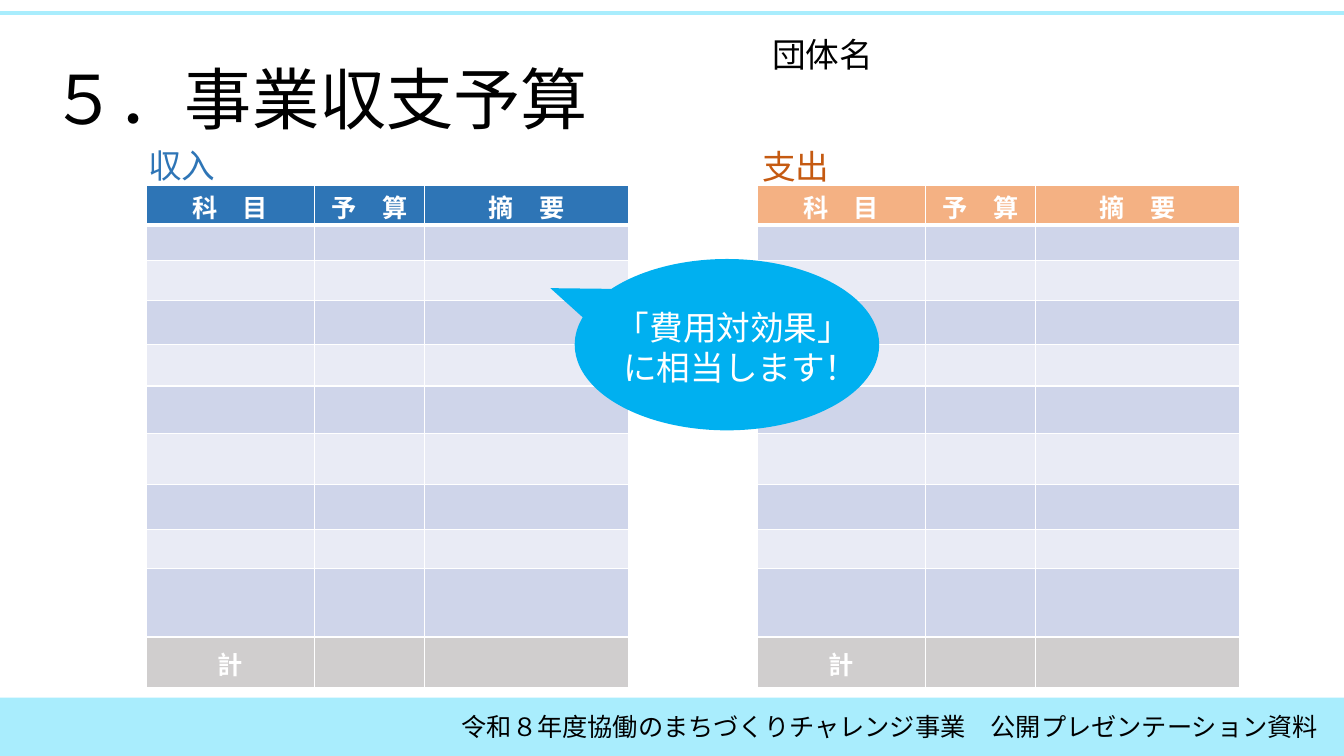
from lxml import etree
from pptx import Presentation
from pptx.dml.color import RGBColor
from pptx.enum.shapes import MSO_CONNECTOR, MSO_SHAPE
from pptx.enum.text import MSO_ANCHOR, MSO_AUTO_SIZE, PP_ALIGN
from pptx.oxml.ns import qn
from pptx.util import Emu, Pt

LEFT, CENTER = PP_ALIGN.LEFT, PP_ALIGN.CENTER
TOP, MIDDLE = MSO_ANCHOR.TOP, MSO_ANCHOR.MIDDLE
RECTANGLE, CALLOUT = MSO_SHAPE.RECTANGLE, MSO_SHAPE.OVAL_CALLOUT
STRAIGHT = MSO_CONNECTOR.STRAIGHT
NO_AUTOFIT = MSO_AUTO_SIZE.NONE

EMU_PER_PX = 9144
FONT = "Noto Sans CJK JP"
TABLE_FONT = "Calibri"
BLACK, WHITE = "000000", "FFFFFF"
AQUA, SKY = "A9EDFD", "00B0F0"
BLUE, ORANGE, PEACH = "2E75B6", "C55A11", "F4B183"
BANDS = ("CFD5EA", "E9EBF5")
TOTAL_FILL = "D0CECE"

HEADINGS = ("科　目", "予　算", "摘　要")
COLUMN_WIDTHS = (167, 109, 203)
ROW_HEIGHTS = (39, 35, 40, 44, 41, 47, 51, 44, 39, 68, 50)


def px(length):
    return Emu(length * EMU_PER_PX)


def color(value):
    return RGBColor.from_string(value)


def set_all(target, values):
    for name, value in values.items():
        setattr(target, name, value)


class BudgetPage:
    def __init__(self, deck):
        self.page = deck.slides.add_slide(deck.slide_layouts[5])
        self.shapes = self.page.shapes

    def add_span(self, para, content, size, ink, font=FONT, bold=False, align=LEFT):
        set_all(para, {"alignment": align, "line_spacing": Pt(round(size * 1.2, 1)),
                       "space_before": Pt(0), "space_after": Pt(0)})
        span = para.add_run()
        span.text = content
        set_all(span.font, {"name": font, "size": Pt(size), "bold": bold})
        span.font.color.rgb = color(ink)
        latin = span.font._element.find(qn("a:latin"))
        east_asian = etree.Element(qn("a:ea"), typeface=FONT)
        latin.addnext(east_asian)

    def fill_frame(self, frame, lines, size, ink):
        set_all(frame, {"word_wrap": True, "auto_size": NO_AUTOFIT, "vertical_anchor": TOP,
                        "margin_left": px(10), "margin_right": px(10),
                        "margin_top": px(5 + size // 8), "margin_bottom": px(5)})
        for number, content in enumerate(lines):
            para = frame.add_paragraph() if number else frame.paragraphs[0]
            self.add_span(para, content, size, ink)

    def title(self, content, left, top, width, height):
        box = self.shapes.title
        set_all(box, {"left": px(left), "top": px(top),
                      "width": px(width), "height": px(height)})
        self.fill_frame(box.text_frame, [content], 48, BLACK)

    def text(self, lines, left, top, width, height, size=24, ink=BLACK):
        box = self.shapes.add_textbox(px(left), px(top), px(width), px(height))
        self.fill_frame(box.text_frame, lines, size, ink)

    def shape(self, kind, left, top, width, height, fill):
        box = self.shapes.add_shape(kind, px(left), px(top), px(width), px(height))
        box.shadow.inherit = False
        box.fill.solid()
        box.fill.fore_color.rgb = color(fill)
        box.line.fill.background()
        return box

    def callout(self, left, top, width, height, tip_left, tip_top, fill):
        box = self.shape(CALLOUT, left, top, width, height, fill)
        box.adjustments[0] = round((tip_left - left) / width - 0.5, 2)
        box.adjustments[1] = round((tip_top - top) / height - 0.5, 2)

    def rule(self, top, width, ink, weight):
        line = self.shapes.add_connector(STRAIGHT, 0, px(top), px(width), px(top))
        line.line.color.rgb = color(ink)
        line.line.width = Pt(weight)
        etree.SubElement(line._element.spPr, qn("a:effectLst"))

    def style_cell(self, cell, fill, top_weight, bottom_weight):
        properties = cell._tc.get_or_add_tcPr()
        weights = {"lnL": 1, "lnR": 1, "lnT": top_weight, "lnB": bottom_weight}
        for side, weight in weights.items():
            border = etree.SubElement(properties, qn(f"a:{side}"), w=str(Pt(weight)))
            solid = etree.SubElement(border, qn("a:solidFill"))
            etree.SubElement(solid, qn("a:srgbClr"), val=WHITE)
        cell.fill.solid()
        cell.fill.fore_color.rgb = color(fill)

    def table(self, left, top, heading_fill):
        last = len(ROW_HEIGHTS) - 1
        table = self.shapes.add_table(
            len(ROW_HEIGHTS), len(COLUMN_WIDTHS), px(left), px(top),
            px(sum(COLUMN_WIDTHS)), px(sum(ROW_HEIGHTS))).table
        for column, width in zip(table.columns, COLUMN_WIDTHS):
            column.width = px(width)
        labels = {(0, column): heading for column, heading in enumerate(HEADINGS)}
        labels[last, 0] = "計"
        fills = {0: heading_fill, last: TOTAL_FILL}
        for row, height in enumerate(ROW_HEIGHTS):
            table.rows[row].height = px(height)
            for column in range(len(COLUMN_WIDTHS)):
                cell = table.cell(row, column)
                self.style_cell(cell, fills.get(row, BANDS[(row - 1) % 2]),
                                3 if row == 1 else 1, 3 if row == 0 else 1)
                para = cell.text_frame.paragraphs[0]
                if (row, column) in labels:
                    set_all(cell, {"margin_top": px(9), "margin_bottom": 0,
                                   "vertical_anchor": MIDDLE if row == last else TOP})
                    self.add_span(para, labels[row, column], 18, WHITE,
                                  TABLE_FONT, True, CENTER)
                else:
                    etree.SubElement(para._p, qn("a:endParaRPr"), sz="1000")


def main():
    deck = Presentation()
    set_all(deck, {"slide_width": px(1333), "slide_height": px(750)})
    budget = BudgetPage(deck)
    budget.title("５．事業収支予算", 40, 46, 883, 91)
    budget.shape(RECTANGLE, 0, 692, 1333, 58, AQUA)
    budget.rule(13, 1333, AQUA, 3)
    budget.table(145, 184, BLUE)
    budget.table(751, 184, PEACH)
    budget.text(["支出"], 746, 137, 185, 50, ink=ORANGE)
    budget.text(["収入"], 137, 136, 185, 50, ink=BLUE)
    budget.text(["令和８年度協働のまちづくりチャレンジ事業　公開プレゼンテーション資料"],
                448, 699, 892, 40, size=18)
    budget.text(["団体名"], 756, 26, 483, 50)
    budget.callout(570, 257, 302, 170, 545, 286, SKY)
    budget.text(["「費用対効果」", " に相当します！"], 601, 296, 293, 91, ink=WHITE)
    deck.save("out.pptx")


if __name__ == "__main__":
    main()
